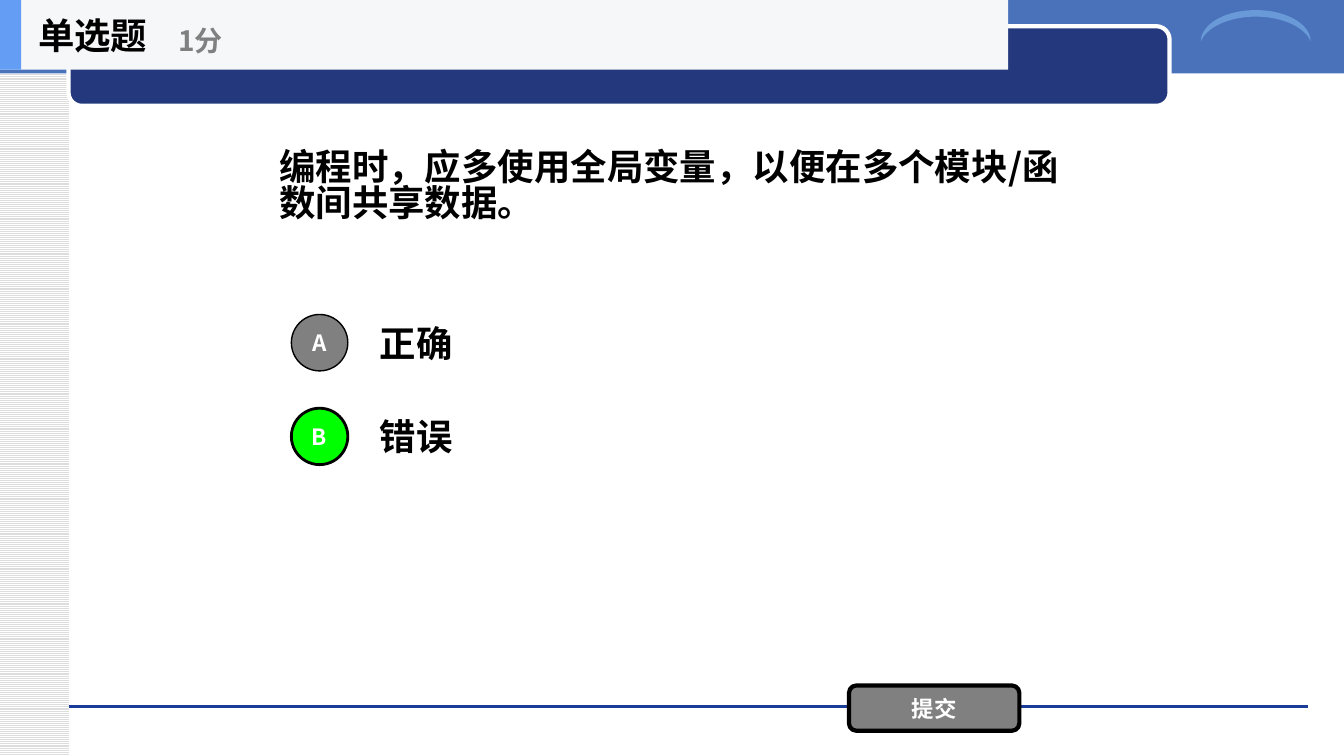
from dataclasses import dataclass
from typing import Optional, Union

from lxml.etree import SubElement
from pptx import Presentation
from pptx.dml.color import RGBColor
from pptx.enum.dml import MSO_PATTERN
from pptx.enum.shapes import MSO_CONNECTOR, MSO_SHAPE
from pptx.enum.text import MSO_ANCHOR, MSO_AUTO_SIZE, PP_ALIGN
from pptx.oxml.ns import qn
from pptx.shapes.autoshape import Shape
from pptx.shapes.shapetree import GroupShapes, SlideShapes
from pptx.util import Emu, Pt

PX = 9144  # 100 px to the inch
FONT = "Noto Sans CJK SC"
COLORS = {
    "black": "000000",
    "white": "FFFFFF",
    "grey": "808080",
    "green": "00FF00",
    "stripe": "DDDDDD",
    "band": "4972BB",
    "panel": "23387D",
    "moon": "6A99D8",
    "rule": "1A3D97",
    "header": "F6F7F8",
    "accent": "639EF4",
}
FRAME_FORMAT = {
    "word_wrap": True,
    "auto_size": MSO_AUTO_SIZE.NONE,
    "vertical_anchor": MSO_ANCHOR.MIDDLE,
}
Shapes = Union[SlideShapes, GroupShapes]


@dataclass(frozen=True)
class Box:
    left: int
    top: int
    width: int
    height: int

    def emu(self) -> tuple[Emu, ...]:
        return tuple(Emu(v * PX) for v in (self.left, self.top, self.width, self.height))


@dataclass(frozen=True)
class Block:
    kind: MSO_SHAPE
    box: Box
    fill: str
    outline: Optional[str] = None
    weight: int = 0
    rotation: int = 0


@dataclass(frozen=True)
class Label:
    text: str
    size: int = 26
    color: str = "black"
    align: PP_ALIGN = PP_ALIGN.LEFT
    spacing: float = 1.0


@dataclass(frozen=True)
class Option:
    letter: str
    text: str
    fill: str
    weight: int


def rgb(name: str) -> RGBColor:
    return RGBColor.from_string(COLORS[name])


def write_text(shape: Shape, label: Label) -> None:
    frame = shape.text_frame
    for name, value in FRAME_FORMAT.items():
        setattr(frame, name, value)
    paragraph = frame.paragraphs[0]
    for name, value in {"alignment": label.align, "line_spacing": label.spacing}.items():
        setattr(paragraph, name, value)
    run = paragraph.add_run()
    run.text = label.text
    for name, value in {"name": FONT, "size": Pt(label.size), "bold": True}.items():
        setattr(run.font, name, value)
    run.font.color.rgb = rgb(label.color)
    SubElement(run.font._element, qn("a:ea"), typeface=FONT)


def add_block(shapes: Shapes, block: Block, label: Optional[Label] = None) -> Shape:
    shape = shapes.add_shape(block.kind, *block.box.emu())
    shape.shadow.inherit = False
    shape.rotation = block.rotation
    shape.fill.solid()
    shape.fill.fore_color.rgb = rgb(block.fill)
    if block.outline:
        shape.line.color.rgb = rgb(block.outline)
        shape.line.width = Pt(block.weight)
    else:
        shape.line.fill.background()
    if label:
        write_text(shape, label)
    return shape


def add_label(shapes: Shapes, box: Box, label: Label) -> None:
    write_text(shapes.add_textbox(*box.emu()), label)


def add_backdrop(shapes: SlideShapes) -> None:
    # Striped margin
    margin = add_block(shapes, Block(MSO_SHAPE.RECTANGLE, Box(0, 0, 68, 750), "white"))
    margin.fill.patterned()
    margin.fill.pattern = MSO_PATTERN.LIGHT_HORIZONTAL
    margin.fill.fore_color.rgb = rgb("stripe")
    margin.fill.back_color.rgb = rgb("white")

    # Top band and footer rule
    add_block(shapes, Block(MSO_SHAPE.RECTANGLE, Box(0, -3, 1333, 76), "band"))
    ends = [Emu(v * PX) for v in (68, 701, 1297, 701)]
    rule = shapes.add_connector(MSO_CONNECTOR.STRAIGHT, *ends)
    rule.line.color.rgb = rgb("rule")
    rule.line.width = Pt(0)
    SubElement(rule._element.spPr, qn("a:effectLst"))

    # Title panel and crescent
    add_block(shapes, Block(MSO_SHAPE.ROUNDED_RECTANGLE, Box(68, 26, 1092, 79),
                            "panel", "white", 3))
    moon = add_block(shapes, Block(MSO_SHAPE.MOON, Box(1230, -29, 31, 109), "moon", rotation=90))
    moon.adjustments[0] = 0.21


def add_options(shapes: SlideShapes) -> None:
    options = [Option("A", "正确", "grey", 1), Option("B", "错误", "green", 2)]
    for index, option in enumerate(options):
        top = 305 + 93 * index
        add_label(shapes, Box(367, top, 700, 70), Label(option.text))
        add_block(
            shapes,
            Block(MSO_SHAPE.OVAL, Box(289, top + 7, 56, 56), option.fill, "black", option.weight),
            Label(option.letter, 16, "white", PP_ALIGN.CENTER),
        )


def add_header(shapes: SlideShapes) -> None:
    header = shapes.add_group_shape().shapes
    add_block(header, Block(MSO_SHAPE.RECTANGLE, Box(0, 0, 1000, 69), "header"))
    add_block(header, Block(MSO_SHAPE.RECTANGLE, Box(0, 0, 21, 69), "accent"))
    add_label(header, Box(28, 0, 208, 69), Label("单选题"))
    add_label(header, Box(167, 12, 250, 56), Label("1分", 20, "grey"))


def main() -> None:
    presentation = Presentation()
    presentation.slide_width = Emu(1333 * PX)
    presentation.slide_height = Emu(750 * PX)
    slide = presentation.slides.add_slide(presentation.slide_layouts[5])
    shapes = slide.shapes

    # Question
    title = shapes.title
    for name, value in zip(("left", "top", "width", "height"), Box(267, 69, 800, 234).emu()):
        setattr(title, name, value)
    question = "编程时，应多使用全局变量，以便在多个模块/函数间共享数据。"
    write_text(title, Label(question, spacing=0.83))

    add_backdrop(shapes)
    add_options(shapes)

    # Submit button
    add_block(
        shapes,
        Block(MSO_SHAPE.ROUNDED_RECTANGLE, Box(842, 680, 169, 45), "grey", "black", 3),
        Label("提交", 16, "white", PP_ALIGN.CENTER),
    )
    add_header(shapes)
    presentation.save("out.pptx")


if __name__ == "__main__":
    main()
